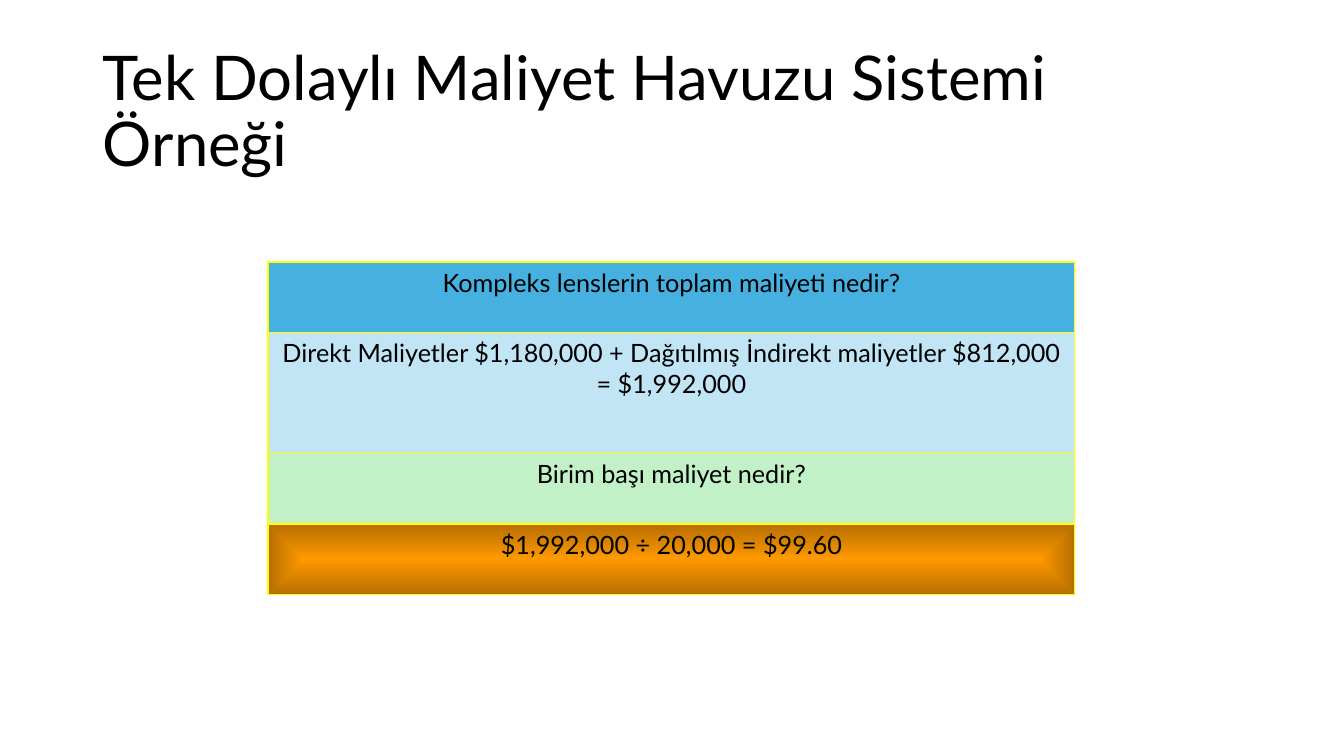
from lxml import etree
from pptx import Presentation
from pptx.dml.color import RGBColor
from pptx.enum.shapes import MSO_SHAPE
from pptx.enum.text import MSO_ANCHOR, PP_ALIGN
from pptx.oxml.ns import qn
from pptx.util import Inches, Pt

RECTANGLE = MSO_SHAPE.RECTANGLE
TOP, MIDDLE = MSO_ANCHOR.TOP, MSO_ANCHOR.MIDDLE
LEFT, CENTER = PP_ALIGN.LEFT, PP_ALIGN.CENTER

TITLE = "Tek Dolaylı Maliyet Havuzu Sistemi Örneği"
COST_STEPS = [
    ("Kompleks lenslerin toplam maliyeti nedir?", 0.7, "question", True),
    ("Direkt Maliyetler $1,180,000 + Dağıtılmış İndirekt maliyetler $812,000 = $1,992,000",
     1.2, "total", True),
    ("Birim başı maliyet nedir?", 0.7, "unit_question", False),
    ("$1,992,000 ÷ 20,000 = $99.60", 0.7, "unit_cost", False),
]
THEME = {
    "font": "Lato", "title_size": 44, "step_size": 18,
    "text": "000000", "border": "FFFF00",
    "question": "46B1E1", "total": "C1E5F5",
    "unit_question": "C2F1C8", "unit_cost": "FF9900", "edge_shade": "47000",
}
STACK_LEFT, STACK_TOP, STACK_WIDTH = 2.66, 2.6, 8


def color(name):
    return RGBColor.from_string(THEME[name])


def write(frame, text, size, anchor, align, wrap=True):
    frame.text = text
    frame.word_wrap = wrap
    frame.vertical_anchor = anchor
    paragraph = frame.paragraphs[0]
    paragraph.alignment = align
    font = paragraph.runs[0].font
    font.name = THEME["font"]
    font.size = Pt(THEME[size])
    font.color.rgb = color("text")
    return paragraph


def glow_from_center(step):
    step.fill.gradient()
    gradient = step._element.spPr.find(qn("a:gradFill"))
    for child in list(gradient):
        gradient.remove(child)
    stops = etree.SubElement(gradient, qn("a:gsLst"))
    for position in ("0", "100000"):
        stop = etree.SubElement(stops, qn("a:gs"), pos=position)
        tint = etree.SubElement(stop, qn("a:srgbClr"), val=THEME["unit_cost"])
    etree.SubElement(tint, qn("a:shade"), val=THEME["edge_shade"])
    spread = etree.SubElement(gradient, qn("a:path"), path="shape")
    etree.SubElement(spread, qn("a:fillToRect"), l="50000", t="50000", r="50000", b="50000")


def add_title(slide):
    title = slide.shapes.title
    title.left, title.top = Inches(0.92), Inches(0.4)
    title.width, title.height = Inches(11.5), Inches(1.45)
    heading = write(title.text_frame, TITLE, "title_size", MIDDLE, LEFT)
    heading.line_spacing = 0.9


def add_cost_steps(slide):
    top = STACK_TOP
    for text, height, role, wrap in COST_STEPS:
        step = slide.shapes.add_shape(RECTANGLE, Inches(STACK_LEFT), Inches(top),
                                      Inches(STACK_WIDTH), Inches(height))
        step.shadow.inherit = False
        if role == "unit_cost":
            glow_from_center(step)
        else:
            step.fill.solid()
            step.fill.fore_color.rgb = color(role)
        step.line.color.rgb = color("border")
        step.line.width = Pt(1)
        write(step.text_frame, text, "step_size", TOP, CENTER, wrap)
        top += height


def main():
    deck = Presentation()
    deck.slide_width, deck.slide_height = Inches(13.33), Inches(7.5)
    slide = deck.slides.add_slide(deck.slide_layouts[5])
    add_title(slide)
    add_cost_steps(slide)
    deck.save("out.pptx")


if __name__ == "__main__":
    main()
